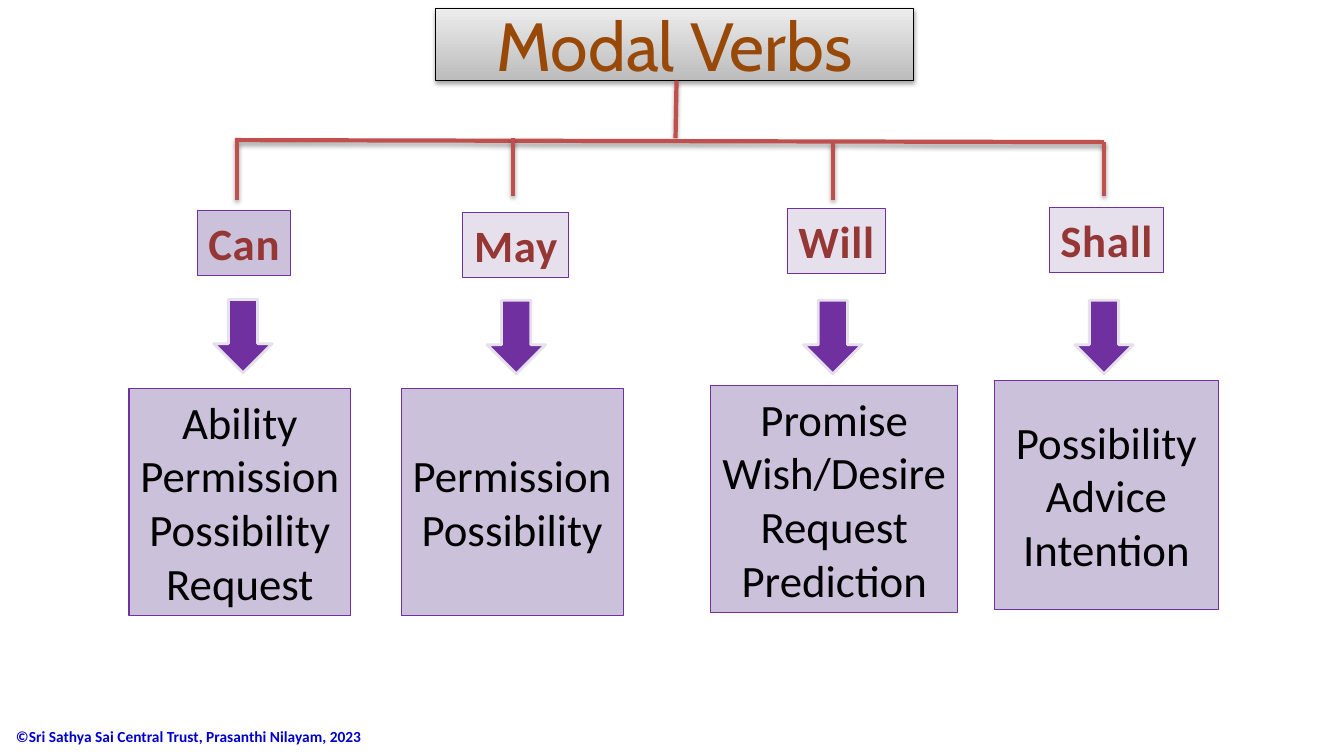
from lxml.etree import SubElement
from pptx import Presentation
from pptx.dml.color import RGBColor
from pptx.enum.shapes import MSO_CONNECTOR, MSO_SHAPE
from pptx.enum.text import MSO_ANCHOR, PP_ALIGN
from pptx.oxml import parse_xml
from pptx.oxml.ns import nsdecls, qn
from pptx.util import Inches, Pt

PURPLE, LILAC, PALE, RED = "7030A0", "CCC1DA", "E6E0EC", "C0504D"

# verb, label box, label fill, arrow left and top, meanings box, meanings
VERBS = [
    ("Can", (1.96, 2.09, 0.92, 0.64), LILAC, (2.12, 2.97), (1.28, 3.85, 2.2, 2.26),
     ["Ability", "Permission", "Possibility", "Request"]),
    ("May", (4.59, 2.11, 1.05, 0.64), PALE, (4.83, 2.98), (3.98, 3.85, 2.2, 2.26),
     ["Permission", "Possibility"]),
    ("Will", (7.81, 2.07, 0.97, 0.64), PALE, (7.97, 2.98), (7.05, 3.82, 2.45, 2.26),
     ["Promise", "Wish/Desire", "Request", "Prediction"]),
    ("Shall", (10.41, 2.06, 1.13, 0.64), PALE, (10.66, 2.98), (9.86, 3.77, 2.23, 2.28),
     ["Possibility", "Advice", "Intention"]),
]
BRANCHES = [
    (6.71, 0.8, 6.7, 1.37),
    (10.95, 1.41, 2.33, 1.39),
    (2.35, 1.41, 2.35, 1.98),
    (5.09, 1.37, 5.09, 1.94),
    (8.26, 1.41, 8.26, 1.98),
    (10.95, 1.41, 10.95, 1.94),
]


def rgb(value):
    return RGBColor.from_string(value)


def soft_shadow(blur=3.1, dist=1.8, color="000000", alpha=35):
    return parse_xml(
        f'<a:effectLst {nsdecls("a")}><a:outerShdw blurRad="{Pt(blur)}" dist="{Pt(dist)}" '
        f'dir="5400000" rotWithShape="0"><a:srgbClr val="{color}">'
        f'<a:alpha val="{alpha * 1000}"/></a:srgbClr></a:outerShdw></a:effectLst>')


class Diagram:
    """Holds the text style and the current slide."""
    font = "Calibri"
    size = 32

    def __init__(self, slide):
        self.shapes = slide.shapes

    def shape(self, kind, box, fill, line, width=0.75):
        s = self.shapes.add_shape(kind, *map(Inches, box))
        s.shadow.inherit = False
        s.fill.solid()
        s.fill.fore_color.rgb = rgb(fill)
        s.line.color.rgb = rgb(line)
        s.line.width = Pt(width)
        return s

    def set_text(self, s, lines, color="000000", size=None, font=None, bold=False,
                 align=PP_ALIGN.CENTER, wrap=False):
        tf = s.text_frame
        tf.word_wrap = wrap
        tf.vertical_anchor = MSO_ANCHOR.MIDDLE
        tf.text = "\n".join(lines)
        for p in tf.paragraphs:
            p.alignment = align
            p.font.name = font or self.font
            p.font.size = Pt(size or self.size)
            p.font.bold = bold
            p.font.color.rgb = rgb(color)

    def title(self, text, box):
        s = self.shape(MSO_SHAPE.RECTANGLE, box, "FFFFFF", "000000")
        s.fill.gradient()
        s.fill.gradient_angle = 270
        for stop, color in zip(s.fill.gradient_stops, ("EDEDED", "BCBCBC")):
            stop.color.rgb = rgb(color)
        effects = s._element.spPr.find(qn("a:effectLst"))
        effects.getparent().replace(effects, soft_shadow())
        self.set_text(s, [text], "984807", 48.6, "Cabin", wrap=True)

    def branch(self, *ends):
        s = self.shapes.add_connector(MSO_CONNECTOR.STRAIGHT, *map(Inches, ends))
        s.line.color.rgb = rgb(RED)
        s.line.width = Pt(3)
        s._element.spPr.append(soft_shadow())

    def label(self, text, box, fill):
        """Verb name in bold letters with a soft blue shadow."""
        s = self.shape(MSO_SHAPE.RECTANGLE, box, fill, PURPLE)
        self.set_text(s, [text], "953735", bold=True)
        r = s.text_frame.paragraphs[0].runs[0]
        r.font.color.rgb = rgb("953735")
        rPr = r.font._element
        rPr.set("spc", "50")
        ln = SubElement(rPr, qn("a:ln"), w=str(Pt(0.75)))
        outline = SubElement(ln, qn("a:solidFill"))
        SubElement(outline, qn("a:srgbClr"), val="4F81BD")
        rPr.insert(0, ln)
        rPr.append(soft_shadow(2, 1.5, "4F81BD", 50))

    def arrow(self, left, top):
        self.shape(MSO_SHAPE.DOWN_ARROW, (left, top, 0.58, 0.73), PURPLE, PALE, 2)

    def meanings(self, lines, box):
        s = self.shape(MSO_SHAPE.RECTANGLE, box, LILAC, PURPLE)
        self.set_text(s, lines)

    def footer(self, text, box):
        s = self.shapes.add_textbox(*map(Inches, box))
        self.set_text(s, [text], "0000CC", 11, bold=True, align=PP_ALIGN.LEFT, wrap=True)


def main():
    prs = Presentation()
    prs.slide_width, prs.slide_height = Inches(13.33), Inches(7.5)
    diagram = Diagram(prs.slides.add_slide(prs.slide_layouts[6]))
    diagram.footer("©Sri Sathya Sai Central Trust, Prasanthi Nilayam, 2023",
                   (0.06, 7.1, 3.81, 0.41))
    diagram.title("Modal Verbs", (4.32, 0.08, 4.74, 0.72))
    for ends in BRANCHES:
        diagram.branch(*ends)
    for verb, label_box, fill, arrow_at, meanings_box, lines in VERBS:
        diagram.label(verb, label_box, fill)
        diagram.meanings(lines, meanings_box)
        diagram.arrow(*arrow_at)
    prs.save("out.pptx")


if __name__ == "__main__":
    main()
